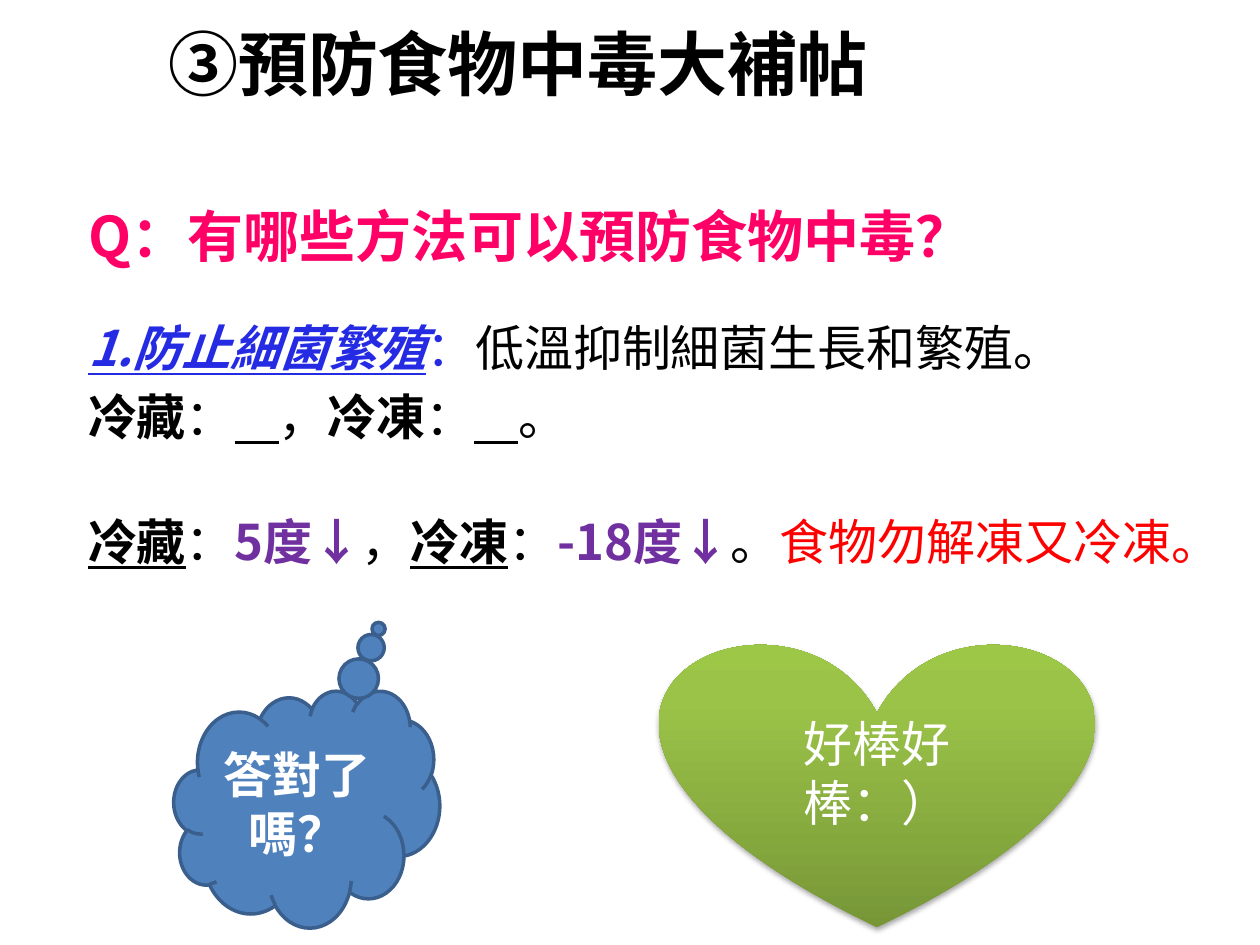
from lxml.etree import SubElement
from pptx import Presentation
from pptx.dml.color import RGBColor
from pptx.enum.shapes import MSO_SHAPE
from pptx.enum.text import MSO_ANCHOR, PP_ALIGN
from pptx.oxml import parse_xml
from pptx.oxml.ns import nsdecls, qn
from pptx.util import Inches, Pt

FONT = "Noto Sans CJK SC"
COLORS = {
    "black": "000000", "white": "FFFFFF", "pink": "FF0066", "blue": "252AE3",
    "purple": "7030A0", "red": "FF0000", "cloud": "4F81BD", "cloud line": "3A5F8C",
    "heart dark": "779737", "heart mid": "9BC348", "heart light": "9DC746",
}


def add_run(paragraph, text, color, size, name=FONT, **formats):
    run = paragraph.add_run()
    run.text = text
    run.font.color.rgb = RGBColor.from_string(COLORS[color])
    values = {"name": name, "size": Pt(size), "bold": False, **formats}
    for attribute, value in values.items():
        setattr(run.font, attribute, value)
    east_asian = SubElement(run.font._element, qn("a:ea"))
    east_asian.set("typeface", FONT)


presentation = Presentation()
presentation.slide_width, presentation.slide_height = Inches(10), Inches(7.5)
slide = presentation.slides.add_slide(presentation.slide_layouts[5])

# Title
title = slide.shapes.title
title.left, title.top = Inches(0.7), Inches(0)
title.width, title.height = Inches(6.82), Inches(1)
title.text_frame.vertical_anchor = MSO_ANCHOR.MIDDLE
title.text_frame.paragraphs[0].alignment = PP_ALIGN.CENTER
add_run(title.text_frame.paragraphs[0], "③預防食物中毒大補帖", "black", 40, bold=True)

# Question and answers: space before in points, size, runs
BOLD = {"bold": True}
LINED = {"underline": True}
KEY = {**BOLD, **LINED}
lines = [
    (0, 32, [("Q：有哪些方法可以預防食物中毒？", "pink", BOLD)]),
    (28, 28, [
        ("1.防止細菌繁殖", "blue", {**KEY, "italic": True}),
        ("：", "blue", {}),
        ("低溫抑制細菌生長和繁殖。", "black", {}),
    ]),
    (5.6, 28, [
        ("冷藏", "black", BOLD), ("：", "black", {}), (" " * 4, "black", LINED),
        ("，", "black", {}),
        ("冷凍", "black", BOLD), ("：", "black", {}), (" " * 4, "black", LINED),
        ("。", "black", {}),
    ]),
    (37.6, 28, [
        ("冷藏", "black", KEY), ("：", "black", {}), ("5度↓", "purple", BOLD),
        ("，", "black", {}),
        ("冷凍", "black", KEY), ("：", "black", {}), ("-18度↓", "purple", BOLD),
        ("。", "black", {}),
        ("食物勿解凍又冷凍。", "red", {}),
    ]),
]
body = slide.shapes.add_textbox(Inches(0.23), Inches(1.55), Inches(9.19), Inches(5.72))
body.text_frame.word_wrap = True
for index, (space, size, runs) in enumerate(lines):
    paragraph = body.text_frame.paragraphs[0] if index == 0 else body.text_frame.add_paragraph()
    paragraph.space_before = Pt(space)
    properties = paragraph._p.get_or_add_pPr()
    properties.set("marL", str(Inches(0.38)))
    properties.set("indent", str(Inches(-0.01)))
    for text, color, formats in runs:
        add_run(paragraph, text, color, size, **formats)

# Cloud and heart
callouts = [
    (MSO_SHAPE.CLOUD_CALLOUT, (1.38, 5.48, 2.11, 1.88), "答對了嗎？", "Calibri", True),
    (MSO_SHAPE.HEART, (5.24, 5.09, 3.44, 2.27), "好棒好棒：）", FONT, False),
]
shapes = []
for kind, place, text, name, bold in callouts:
    shape = slide.shapes.add_shape(kind, *[Inches(value) for value in place])
    shape.shadow.inherit = False
    shape.text_frame.word_wrap = True
    shape.text_frame.vertical_anchor = MSO_ANCHOR.MIDDLE
    paragraph = shape.text_frame.paragraphs[0]
    paragraph.alignment = PP_ALIGN.CENTER
    add_run(paragraph, text, "white", 28, name, bold=bold)
    shapes.append(shape)
cloud, heart = shapes

cloud.adjustments[0], cloud.adjustments[1] = 0.27, -0.76
cloud.fill.solid()
cloud.fill.fore_color.rgb = RGBColor.from_string(COLORS["cloud"])
cloud.line.color.rgb = RGBColor.from_string(COLORS["cloud line"])
cloud.line.width = Pt(2)

# Heart gradient, dark at the bottom, and soft shadow
heart.line.fill.background()
stops = "".join(
    f'<a:gs pos="{position * 1000}"><a:srgbClr val="{COLORS[color]}"/></a:gs>'
    for position, color in [(0, "heart dark"), (80, "heart mid"), (100, "heart light")]
)
gradient = parse_xml(
    f'<a:gradFill {nsdecls("a")} rotWithShape="1"><a:gsLst>{stops}</a:gsLst>'
    '<a:lin ang="16200000" scaled="0"/></a:gradFill>'
)
heart._element.spPr.find(qn("a:prstGeom")).addnext(gradient)
shadow = parse_xml(
    f'<a:outerShdw {nsdecls("a")} blurRad="{Pt(3.1)}" dist="{Pt(1.8)}" dir="5400000" '
    f'rotWithShape="0"><a:srgbClr val="{COLORS["black"]}"><a:alpha val="35000"/>'
    '</a:srgbClr></a:outerShdw>'
)
heart._element.spPr.find(qn("a:effectLst")).append(shadow)

presentation.save("out.pptx")
